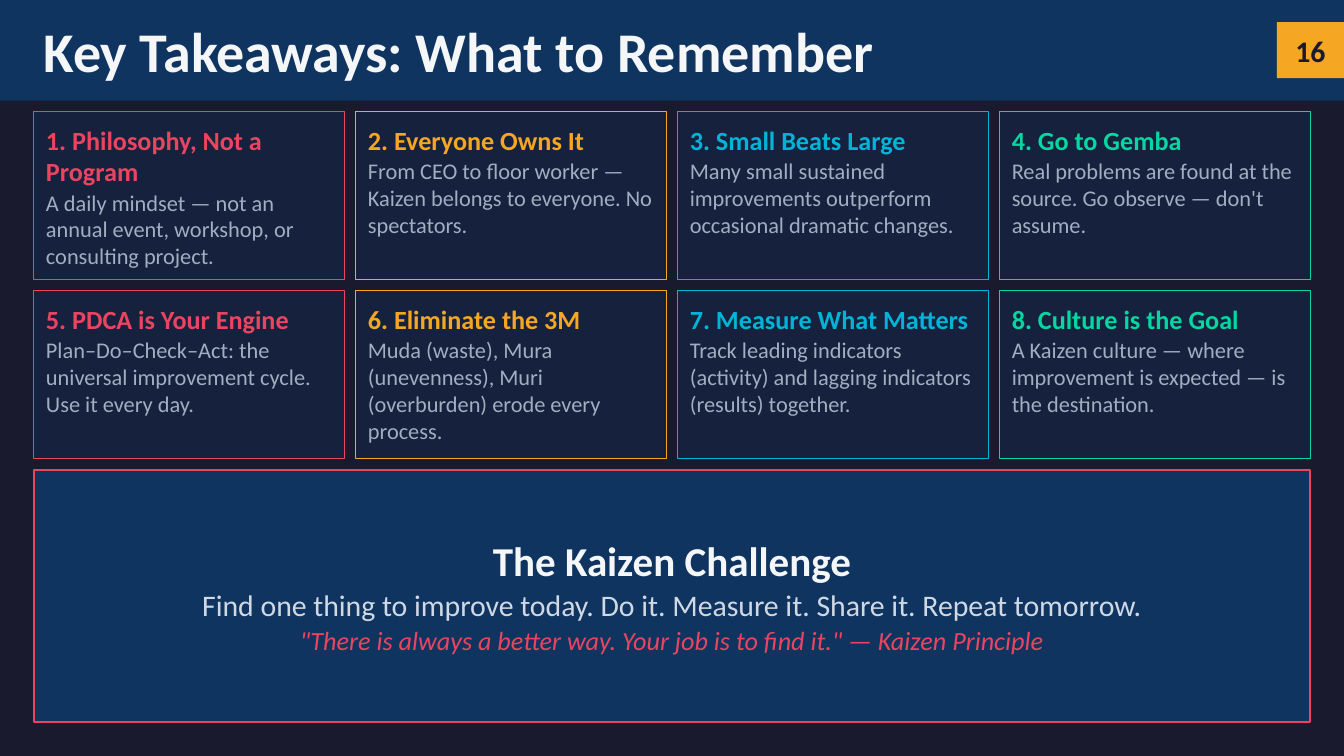
from pptx import Presentation
from pptx.dml.color import RGBColor
from pptx.enum.shapes import MSO_SHAPE as Shape
from pptx.enum.text import MSO_ANCHOR as Anchor, PP_ALIGN as Align
from pptx.util import Cm, Pt

# Colours
NIGHT = RGBColor(0x1A, 0x1A, 0x2E)
NAVY = RGBColor(0x0F, 0x34, 0x60)
CARD = RGBColor(0x16, 0x21, 0x3E)
WHITE = RGBColor(0xF4, 0xF6, 0xF8)
PALE = RGBColor(0xD0, 0xD8, 0xE4)
GREY = RGBColor(0xA0, 0xAE, 0xC0)
RED = RGBColor(0xE9, 0x45, 0x60)
AMBER = RGBColor(0xF5, 0xA6, 0x23)
CYAN = RGBColor(0x00, 0xB4, 0xD8)
GREEN = RGBColor(0x06, 0xD6, 0xA0)

# Content
TITLE = "Key Takeaways: What to Remember"
NUMBER = "16"
COLUMN_COLORS = [RED, AMBER, CYAN, GREEN]
TAKEAWAYS = [
    ("1. Philosophy, Not a Program",
     "A daily mindset — not an annual event, workshop, or consulting project."),
    ("2. Everyone Owns It",
     "From CEO to floor worker — Kaizen belongs to everyone. No spectators."),
    ("3. Small Beats Large",
     "Many small sustained improvements outperform occasional dramatic changes."),
    ("4. Go to Gemba",
     "Real problems are found at the source. Go observe — don't assume."),
    ("5. PDCA is Your Engine",
     "Plan–Do–Check–Act: the universal improvement cycle. Use it every day."),
    ("6. Eliminate the 3M",
     "Muda (waste), Mura (unevenness), Muri (overburden) erode every process."),
    ("7. Measure What Matters",
     "Track leading indicators (activity) and lagging indicators (results) together."),
    ("8. Culture is the Goal",
     "A Kaizen culture — where improvement is expected — is the destination."),
]
CHALLENGE = "The Kaizen Challenge"
CALL = "Find one thing to improve today. Do it. Measure it. Share it. Repeat tomorrow."
QUOTE = '"There is always a better way. Your job is to find it." — Kaizen Principle'

# Layout in centimetres
WIDTH, HEIGHT = 33.87, 19.05
HEADER = 2.54
MARGIN, GAP = 0.85, 0.28
INNER = WIDTH - 2 * MARGIN
COLUMNS = len(COLUMN_COLORS)
CARD_WIDTH = (INNER - (COLUMNS - 1) * GAP) / COLUMNS
CARD_HEIGHT = 4.23
GRID_TOP = HEADER + GAP
CHALLENGE_TOP = GRID_TOP + 2 * (CARD_HEIGHT + GAP)

deck = Presentation()
deck.slide_width, deck.slide_height = Cm(WIDTH), Cm(HEIGHT)
page = deck.slides.add_slide(deck.slide_layouts[6])
page.background.fill.solid()
page.background.fill.fore_color.rgb = NIGHT


def add_panel(left, top, width, height, fill, line=None, line_width=0.75):
    panel = page.shapes.add_shape(
        Shape.RECTANGLE, Cm(left), Cm(top), Cm(width), Cm(height))
    panel.shadow.inherit = False
    panel.fill.solid()
    panel.fill.fore_color.rgb = fill
    if line is None:
        panel.line.fill.background()
    else:
        panel.line.color.rgb = line
        panel.line.width = Pt(line_width)
    return panel


def set_frame(box, anchor=Anchor.MIDDLE, side=0.25, top=0.13):
    frame = box.text_frame
    frame.word_wrap = True
    frame.vertical_anchor = anchor
    frame.margin_left = frame.margin_right = Cm(side)
    frame.margin_top, frame.margin_bottom = Cm(top), Cm(0.13)
    return frame


def write(frame, text, size, color, bold=False, italic=False,
          align=Align.LEFT, first=True):
    para = frame.paragraphs[0] if first else frame.add_paragraph()
    para.alignment = align
    if not first:
        para.space_before = Pt(1.2)
    span = para.add_run()
    span.text = text
    font = span.font
    font.name, font.size = "Calibri", Pt(size)
    font.bold, font.italic = bold, italic
    font.color.rgb = color


# Header with title and page number
add_panel(0, 0, WIDTH, HEADER, NAVY)
title = page.shapes.add_textbox(Cm(MARGIN), Cm(0.28), Cm(28.22), Cm(1.98))
write(set_frame(title), TITLE, 40, WHITE, bold=True)
badge = add_panel(WIDTH - 1.69, 0.56, 1.69, 1.41, AMBER)
write(set_frame(badge), NUMBER, 21.3, NIGHT, bold=True, align=Align.CENTER)

# Takeaway cards
for index, (heading, body) in enumerate(TAKEAWAYS):
    row, column = divmod(index, COLUMNS)
    color = COLUMN_COLORS[column]
    card = add_panel(MARGIN + column * (CARD_WIDTH + GAP),
                     GRID_TOP + row * (CARD_HEIGHT + GAP),
                     CARD_WIDTH, CARD_HEIGHT, CARD, line=color)
    frame = set_frame(card, anchor=Anchor.TOP, side=0.31, top=0.31)
    write(frame, heading, 18.7, color, bold=True)
    write(frame, body, 16, GREY, first=False)

# Closing challenge
challenge = add_panel(MARGIN, CHALLENGE_TOP, INNER, 6.35, NAVY,
                      line=RED, line_width=1.5)
frame = set_frame(challenge, side=1.27)
write(frame, CHALLENGE, 29.3, WHITE, bold=True, align=Align.CENTER)
write(frame, CALL, 21.3, PALE, align=Align.CENTER, first=False)
write(frame, QUOTE, 18.7, RED, italic=True, align=Align.CENTER, first=False)

deck.save("out.pptx")
